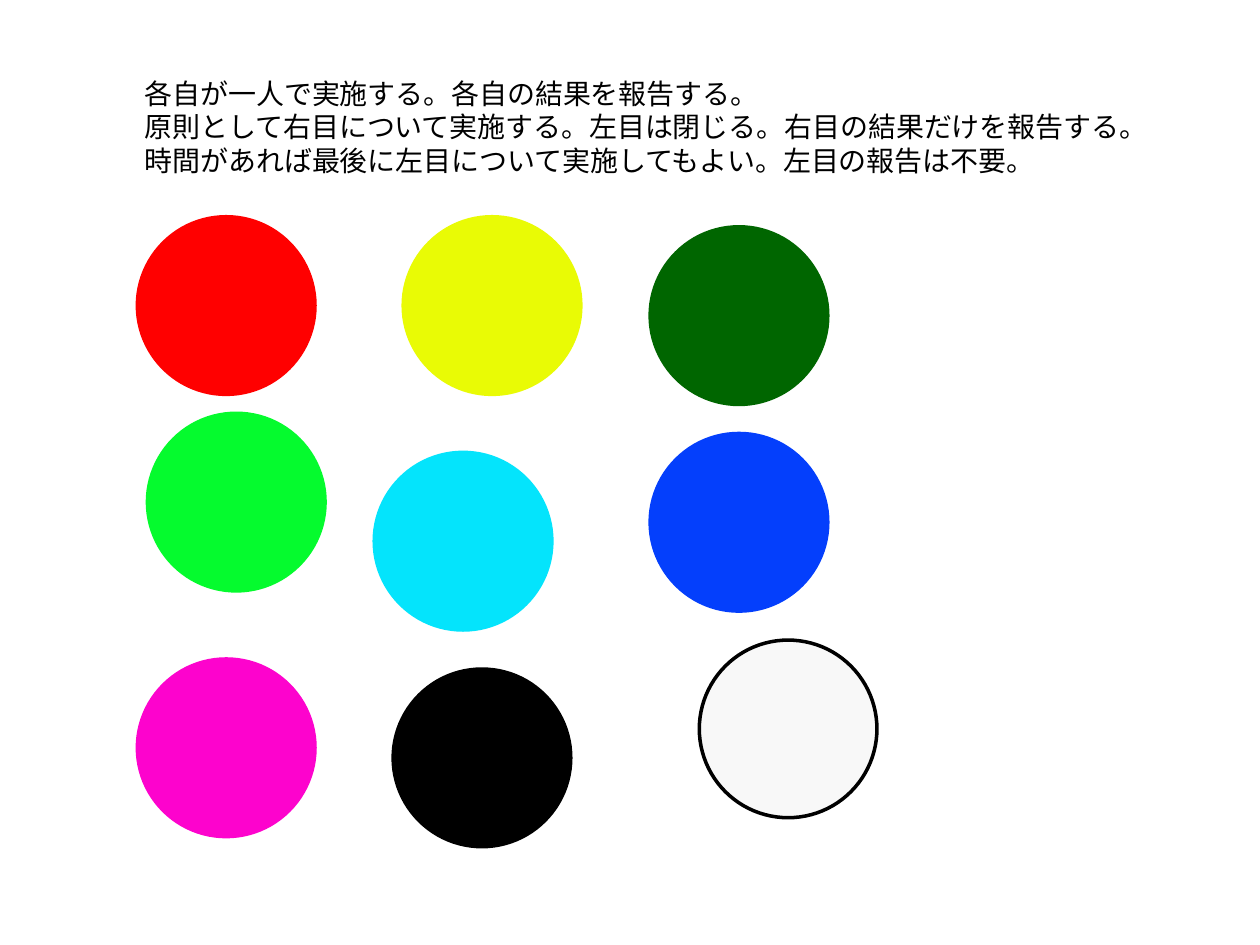
from lxml.etree import SubElement
from pptx import Presentation
from pptx.dml.color import RGBColor
from pptx.enum.shapes import MSO_SHAPE
from pptx.enum.text import MSO_ANCHOR, MSO_AUTO_SIZE
from pptx.oxml.ns import qn
from pptx.util import Inches, Pt

FONT = "Noto Sans CJK JP"
RED = RGBColor(0xFF, 0x00, 0x00)
YELLOW = RGBColor(0xE9, 0xFB, 0x05)
GREEN = RGBColor(0x00, 0x66, 0x00)
LIME = RGBColor(0x05, 0xFB, 0x2E)
CYAN = RGBColor(0x04, 0xE4, 0xFC)
BLUE = RGBColor(0x04, 0x3F, 0xFC)
PINK = RGBColor(0xFD, 0x03, 0xCD)
BLACK = RGBColor(0x00, 0x00, 0x00)
WHITE = RGBColor(0xF8, 0xF8, 0xF8)

RULES = [
    "各自が一人で実施する。各自の結果を報告する。",
    "原則として右目について実施する。左目は閉じる。右目の結果だけを報告する。",
    "時間があれば最後に左目について実施してもよい。左目の報告は不要。",
]
SIZE = 1.41
DISCS = [
    (3.2, 1.72, YELLOW, YELLOW),
    (1.09, 1.72, RED, RED),
    (1.17, 3.28, LIME, LIME),
    (2.97, 3.59, CYAN, CYAN),
    (5.16, 3.44, BLUE, BLUE),
    (1.09, 5.23, PINK, PINK),
    (3.12, 5.31, BLACK, BLACK),
    (5.55, 5.08, WHITE, BLACK),
    (5.16, 1.8, GREEN, GREEN),
]


def add_disc(slide, left, top, fill, edge):
    disc = slide.shapes.add_shape(
        MSO_SHAPE.OVAL, Inches(left), Inches(top), Inches(SIZE), Inches(SIZE)
    )
    disc.shadow.inherit = False
    disc.fill.solid()
    disc.fill.fore_color.rgb = fill
    disc.line.color.rgb = edge
    disc.line.width = Pt(2)


def add_rules(slide):
    box = slide.shapes.add_textbox(
        Inches(0.47), Inches(0.55), Inches(9.22), Inches(0.91)
    )
    frame = box.text_frame
    frame.word_wrap = True
    frame.auto_size = MSO_AUTO_SIZE.SHAPE_TO_FIT_TEXT
    frame.vertical_anchor = MSO_ANCHOR.MIDDLE
    frame.text = "\n".join(RULES)
    for para in frame.paragraphs:
        para.line_spacing = Pt(19.2)
        props = para._p.get_or_add_pPr()
        props.set("marL", "0")
        props.set("indent", str(Inches(0.58)))
        for run in para.runs:
            run.font.size = Pt(16)
            run.font.color.rgb = BLACK
            run.font.name = FONT
            SubElement(run.font._element, qn("a:ea"), typeface=FONT)


def main():
    deck = Presentation()
    deck.slide_width = Inches(10)
    deck.slide_height = Inches(7.5)
    slide = deck.slides.add_slide(deck.slide_layouts[6])
    for disc in DISCS:
        add_disc(slide, *disc)
    add_rules(slide)
    deck.save("out.pptx")


if __name__ == "__main__":
    main()
